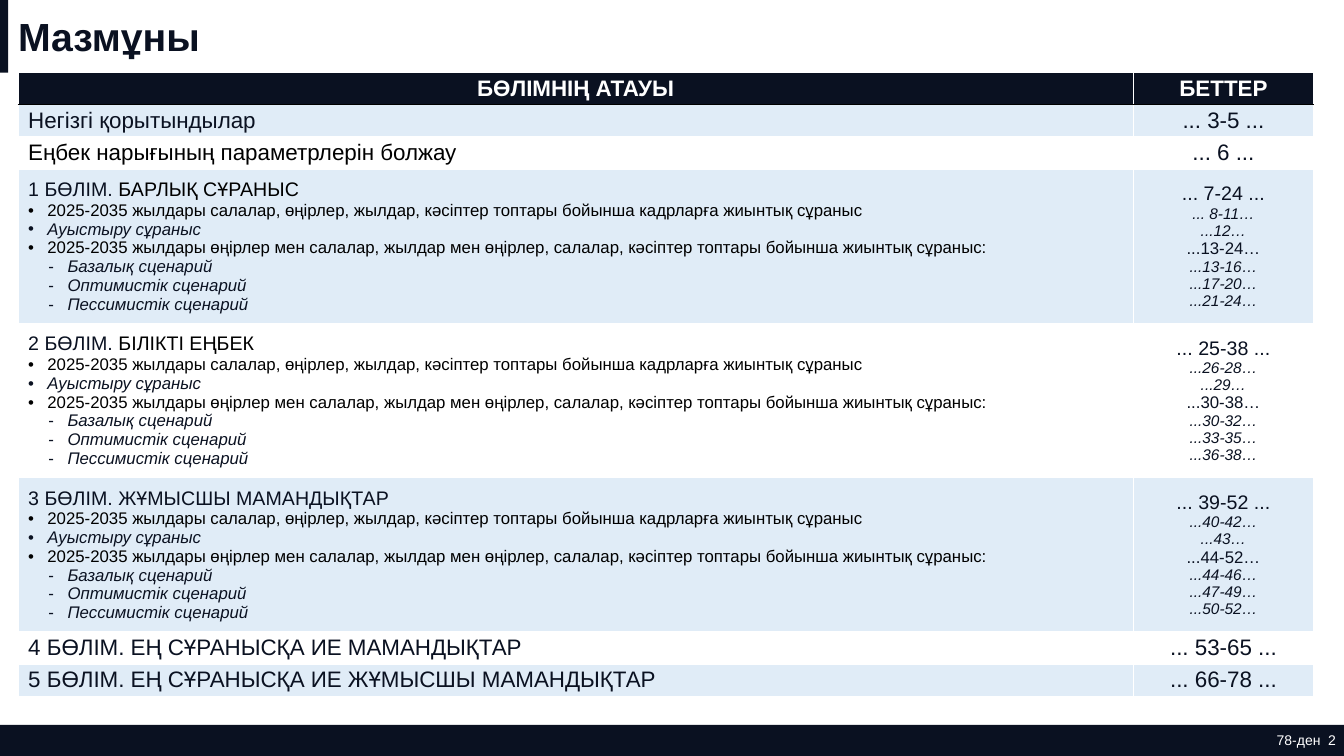
from dataclasses import dataclass

import pptx
import pptx.dml.color
import pptx.enum.shapes
import pptx.enum.text
import pptx.oxml.ns
import pptx.util
from lxml import etree

PX = 9144
FONT = "Arial"
COLORS = {"navy": "0A1121", "white": "FFFFFF", "black": "000000", "band": "CEE1F3"}
BAND_ALPHA = 62000
MIDDLE = pptx.enum.text.MSO_ANCHOR.MIDDLE
LEFT = pptx.enum.text.PP_ALIGN.LEFT
CENTER = pptx.enum.text.PP_ALIGN.CENTER
RIGHT = pptx.enum.text.PP_ALIGN.RIGHT
qn = pptx.oxml.ns.qn


@dataclass
class Span:
    text: str
    size: int
    color: str = "navy"
    bold: bool = False
    italic: bool = False


@dataclass
class Line:
    spans: list[Span]
    align: int = LEFT
    bullet: str = ""
    indent: int = 0
    tab: int = 0


@dataclass
class Row:
    name: list[Line]
    pages: list[Line]
    height: int = 32


@dataclass
class Bar:
    left: int
    top: int
    width: int
    height: int


def px(value: int) -> int:
    return pptx.util.Emu(value * PX)


def rgb(name: str) -> pptx.dml.color.RGBColor:
    return pptx.dml.color.RGBColor.from_string(COLORS[name])


def apply(target, values: dict) -> None:
    for name, value in values.items():
        setattr(target, name, value)


def add_bullet(para, line: Line) -> None:
    hanging = 19
    props = para._p.get_or_add_pPr()
    props.set("marL", str(px(line.indent)))
    props.set("indent", str(px(-hanging)))
    etree.SubElement(props, qn("a:buFont"), typeface=FONT)
    etree.SubElement(props, qn("a:buChar"), char=line.bullet)
    if line.tab:
        tabs = etree.SubElement(props, qn("a:tabLst"))
        etree.SubElement(tabs, qn("a:tab"), pos=str(px(line.tab)), algn="l")


def write(frame, lines: list[Line]) -> None:
    for index, line in enumerate(lines):
        para = frame.add_paragraph() if index else frame.paragraphs[0]
        para.alignment = line.align
        if line.bullet:
            add_bullet(para, line)
        for span in line.spans:
            run = para.add_run()
            run.text = span.text
            apply(run.font, {"name": FONT, "size": pptx.util.Pt(span.size),
                             "bold": span.bold, "italic": span.italic})
            run.font.color.rgb = rgb(span.color)


def draw_bar(page, bar: Bar) -> None:
    shape = page.shapes.add_shape(pptx.enum.shapes.MSO_SHAPE.RECTANGLE, px(bar.left),
                                  px(bar.top), px(bar.width), px(bar.height))
    shape.shadow.inherit = False
    shape.fill.solid()
    shape.fill.fore_color.rgb = rgb("navy")
    shape.line.fill.background()


def add_borders(cell, edges: dict[str, str]) -> None:
    props = cell._tc.get_or_add_tcPr()
    for index, (edge, color) in enumerate(edges.items()):
        border = etree.Element(qn(f"a:{edge}"), w=str(pptx.util.Pt(1)))
        fill = etree.SubElement(border, qn("a:solidFill"))
        etree.SubElement(fill, qn("a:srgbClr"), val=COLORS[color])
        props.insert(index, border)


def fill_cell(cell, row_index: int) -> None:
    if row_index and row_index % 2 == 0:
        cell.fill.background()
        return
    cell.fill.solid()
    cell.fill.fore_color.rgb = rgb("band" if row_index else "navy")
    if row_index:
        color = cell._tc.tcPr.find(".//" + qn("a:srgbClr"))
        etree.SubElement(color, qn("a:alpha"), val=str(BAND_ALPHA))


def draw_table(page, rows: list[Row]) -> None:
    widths = [1106, 179]
    table = page.shapes.add_table(len(rows), len(widths), px(18), px(72), px(sum(widths)),
                                  px(sum(row.height for row in rows))).table
    apply(table, {"first_row": False, "horz_banding": False})
    for column, width in zip(table.columns, widths):
        column.width = px(width)
    for index, row in enumerate(rows):
        table.rows[index].height = px(row.height)
        edges = {"lnL": "white", "lnR": "white",
                 "lnT": "black" if index == 1 else "white",
                 "lnB": "black" if index == 0 else "white"}
        for cell, lines in zip(table.rows[index].cells, (row.name, row.pages)):
            apply(cell, {"vertical_anchor": MIDDLE, "margin_left": px(10),
                         "margin_right": px(10), "margin_top": px(2), "margin_bottom": px(2)})
            write(cell.text_frame, lines)
            fill_cell(cell, index)
            add_borders(cell, edges)


def simple_row(name: str, pages: str, color: str = "navy") -> Row:
    return Row([Line([Span(name, 16, color)])], [Line([Span(pages, 16)], CENTER)])


def section_row(number: int, name: str, color: str, pages: list[str]) -> Row:
    demand = "2025-2035 жылдары салалар, өңірлер, жылдар, кәсіптер топтары бойынша кадрларға жиынтық сұраныс"
    total = ("2025-2035 жылдары өңірлер мен салалар, жылдар мен өңірлер, салалар, "
             "кәсіптер топтары бойынша жиынтық сұраныс:")
    points = [Span(demand, 12, "black"), Span("Ауыстыру сұраныс", 12, italic=True),
              Span(total, 12, "black")]
    scenarios = ["Базалық сценарий", "Оптимистік сценарий", "Пессимистік сценарий"]
    lines = [Line([Span(f"{number} БӨЛІМ. ", 14), Span(name, 14, color)])]
    lines += [Line([point], bullet="•", indent=19) for point in points]
    lines += [Line([Span(text, 12, italic=True)], bullet="-", indent=39, tab=59)
              for text in scenarios]
    sizes = [14, 11, 11, 12, 11, 11, 11]
    page_lines = [Line([Span(text, size, italic=size == 11)], CENTER)
                  for text, size in zip(pages, sizes)]
    return Row(lines, page_lines, 153)


def header_row(*titles: str) -> Row:
    return Row(*([Line([Span(title, 16, "white", bold=True)], CENTER)] for title in titles))


ROWS = [
    header_row("БӨЛІМНІҢ АТАУЫ", "БЕТТЕР"),
    simple_row("Негізгі қорытындылар", "... 3-5 ..."),
    simple_row("Еңбек нарығының параметрлерін болжау", "... 6 ...", "black"),
    section_row(1, "БАРЛЫҚ СҰРАНЫС", "black",
                ["... 7-24 ...", "... 8-11…", "...12…", "...13-24…",
                 "...13-16…", "...17-20…", "...21-24…"]),
    section_row(2, "БІЛІКТІ ЕҢБЕК", "black",
                ["... 25-38 ...", "...26-28…", "...29…", "...30-38…",
                 "...30-32…", "...33-35…", "...36-38…"]),
    section_row(3, "ЖҰМЫСШЫ МАМАНДЫҚТАР", "navy",
                ["... 39-52 ...", "...40-42…", "...43…", "...44-52…",
                 "...44-46…", "...47-49…", "...50-52…"]),
    simple_row("4 БӨЛІМ. ЕҢ СҰРАНЫСҚА ИЕ МАМАНДЫҚТАР", "... 53-65 ..."),
    simple_row("5 БӨЛІМ. ЕҢ СҰРАНЫСҚА ИЕ ЖҰМЫСШЫ МАМАНДЫҚТАР", "... 66-78 ..."),
]
BARS = [Bar(0, 719, 1333, 31), Bar(0, 0, 8, 72)]


def main() -> None:
    deck = pptx.Presentation()
    apply(deck, {"slide_width": px(1333), "slide_height": px(750)})
    page = deck.slides.add_slide(deck.slide_layouts[5])
    for bar in BARS:
        draw_bar(page, bar)

    title = page.shapes.title
    apply(title, {"left": px(8), "top": px(0), "width": px(1325), "height": px(72)})
    apply(title.text_frame, {"vertical_anchor": MIDDLE, "word_wrap": True})
    write(title.text_frame, [Line([Span("Мазмұны", 28, bold=True)])])

    box = page.shapes.add_textbox(px(1204), px(719), px(121), px(31))
    apply(box.text_frame, {"vertical_anchor": MIDDLE, "word_wrap": True, "margin_right": 0})
    write(box.text_frame, [Line([Span("78-ден  2", 10, "white")], RIGHT)])

    draw_table(page, ROWS)
    deck.save("out.pptx")


if __name__ == "__main__":
    main()
